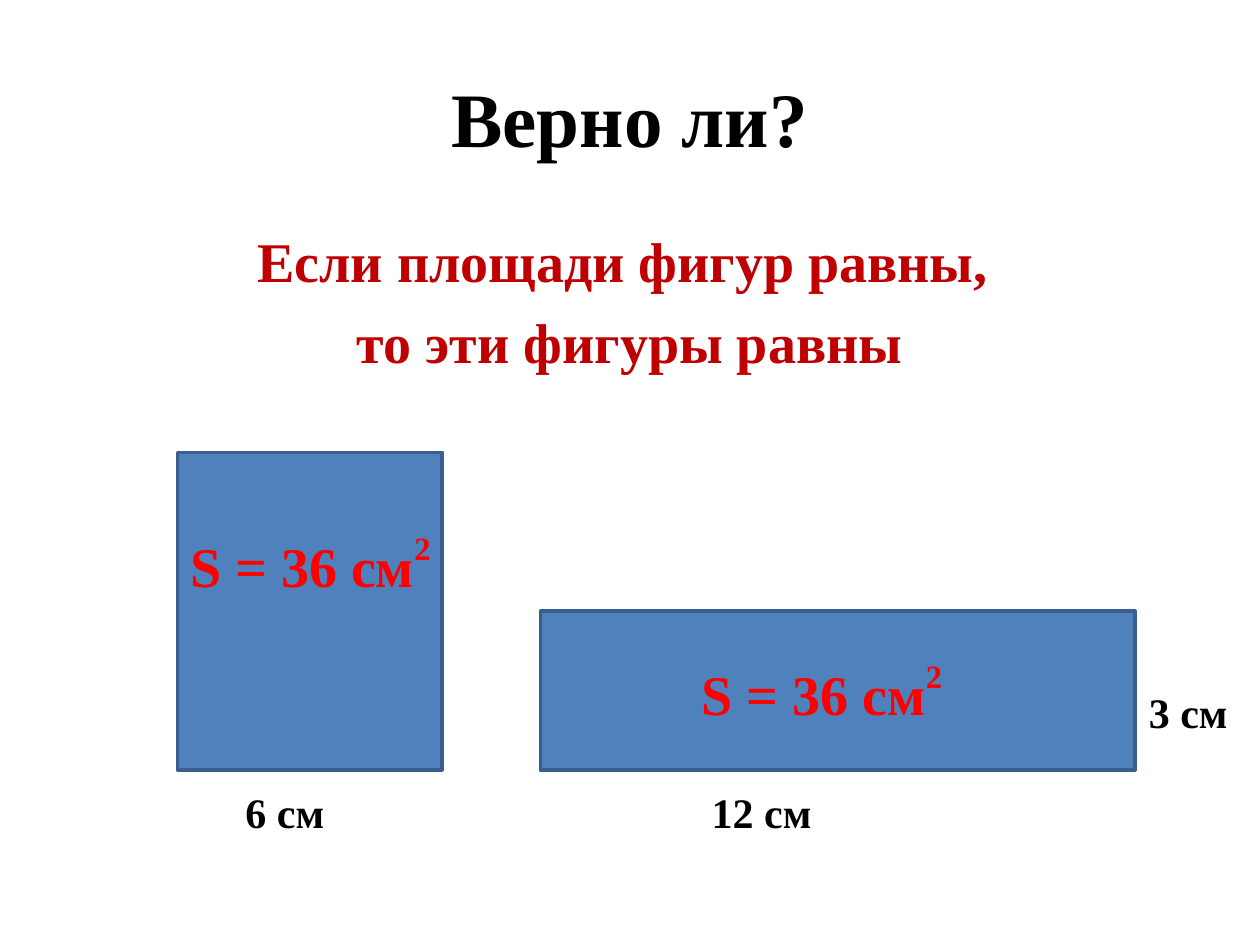
from pptx import Presentation
from pptx.dml.color import RGBColor
from pptx.enum import shapes, text
from pptx.util import Pt

COLORS = {"ink": "000000", "claim": "C00000", "area": "FF0000",
          "fill": "4F81BD", "outline": "3A5F8C"}
FONT = "Times New Roman"
TITLE = "Верно ли?"
CLAIM = ["Если площади фигур равны, ", "то эти фигуры равны"]
AREA = "S = 36 см"

BASELINE = 439.9
RECTANGLES = [(101.5, 151.2, 181.4), (308.9, 339.8, 90.7)]
SIDES = [("6 см", 133.2, 445.7, 67.7), ("3 см", 649.4, 388.8, 62.6),
         ("12 см", 399.6, 445.7, 90.7)]
AREA_LABELS = [(101.5, 298.1), (393.8, 371.5)]


def color(name):
    return RGBColor.from_string(COLORS[name])


def add_text(slide, lines, box, size=24, ink="ink", center=False,
             middle=False, grow=True, space=0, exponent=None):
    shape = slide.shapes.add_textbox(*map(Pt, box))
    frame = shape.text_frame
    frame.word_wrap = True
    frame.auto_size = (text.MSO_AUTO_SIZE.SHAPE_TO_FIT_TEXT if grow
                       else text.MSO_AUTO_SIZE.NONE)
    frame.vertical_anchor = (text.MSO_ANCHOR.MIDDLE if middle
                             else text.MSO_ANCHOR.TOP)
    for index, line in enumerate(lines):
        paragraph = frame.add_paragraph() if index else frame.paragraphs[0]
        paragraph.alignment = text.PP_ALIGN.CENTER if center else text.PP_ALIGN.LEFT
        paragraph.space_before = Pt(space)
        paragraph.add_run().text = line
        if exponent:
            raised = paragraph.add_run()
            raised.text = exponent
            raised.font._element.set("baseline", "48000")
        for run in paragraph.runs:
            run.font.name = FONT
            run.font.size = Pt(size)
            run.font.bold = True
            run.font.color.rgb = color(ink)


def add_rectangle(slide, left, width, height):
    shape = slide.shapes.add_shape(
        shapes.MSO_SHAPE.RECTANGLE,
        *map(Pt, (left, BASELINE - height, width, height)))
    shape.shadow.inherit = False
    shape.fill.solid()
    shape.fill.fore_color.rgb = color("fill")
    shape.line.color.rgb = color("outline")
    shape.line.width = Pt(2)


def main():
    presentation = Presentation()
    presentation.slide_width, presentation.slide_height = Pt(720), Pt(540)
    slide = presentation.slides.add_slide(presentation.slide_layouts[6])
    add_text(slide, [TITLE], (36, 21.6, 648, 90), size=44,
             center=True, middle=True, grow=False)
    add_text(slide, CLAIM, (36, 126, 648, 87.1), size=32, ink="claim",
             center=True, grow=False, space=7.5)
    for rectangle in RECTANGLES:
        add_rectangle(slide, *rectangle)
    for label, left, top, width in SIDES:
        add_text(slide, [label], (left, top, width, 36))
    for left, top in AREA_LABELS:
        add_text(slide, [AREA], (left, top, 157.7, 46.1), size=32,
                 ink="area", exponent="2")
    presentation.save("out.pptx")


if __name__ == "__main__":
    main()
